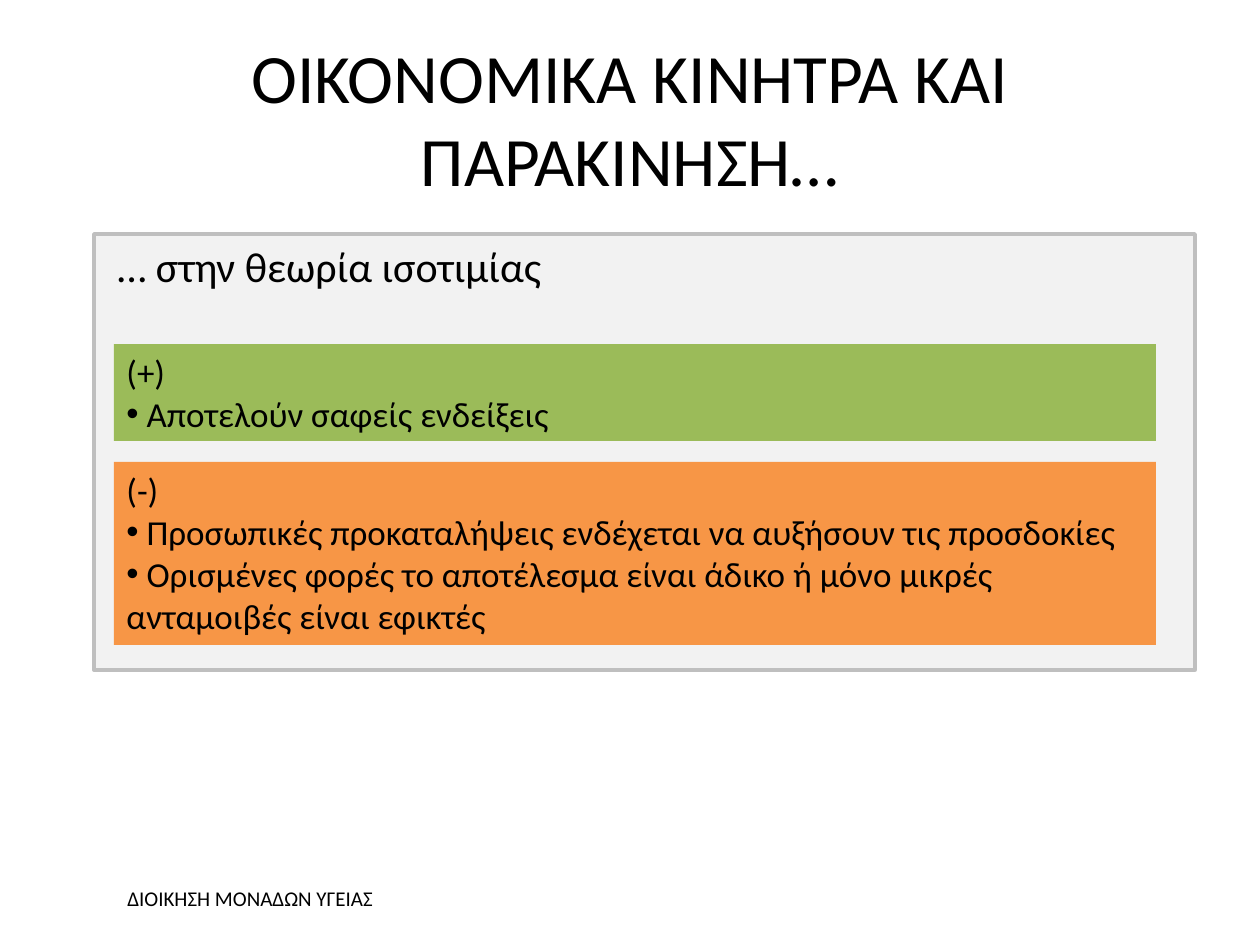
from lxml import etree
from pptx import Presentation
from pptx.dml.color import RGBColor
from pptx.enum.shapes import MSO_SHAPE as Shape
from pptx.enum.text import MSO_ANCHOR as Anchor, PP_ALIGN as Align
from pptx.oxml.ns import qn
from pptx.util import Emu, Pt

EMU_PER_PX = 914400 / 126


def px(length):
    return Emu(round(length * EMU_PER_PX))


def color(hex_value):
    return RGBColor.from_string(hex_value)


class SlideBuilder:
    font_name = "Calibri"
    text_color = "000000"

    def __init__(self, slide):
        self.slide = slide

    def box(self, left, top, width, height, fill, line=None):
        shape = self.slide.shapes.add_shape(
            Shape.RECTANGLE, px(left), px(top), px(width), px(height))
        shape.shadow.inherit = False
        shape.fill.solid()
        shape.fill.fore_color.rgb = color(fill)
        if line:
            shape.line.color.rgb = color(line)
            shape.line.width = Pt(2)
        else:
            shape.line.fill.background()
        return shape

    def text(self, left, top, width, height, content, size,
             align=Align.LEFT, anchor=Anchor.TOP):
        shape = self.slide.shapes.add_textbox(
            px(left), px(top), px(width), px(height))
        self.fill_text(shape.text_frame, [content], size, align, anchor)

    def list_box(self, left, top, width, height, fill, heading, items):
        shape = self.box(left, top, width, height, fill)
        lines = [heading] + [f" {item}" for item in items]
        self.fill_text(shape.text_frame, lines, 20)
        for paragraph in shape.text_frame.paragraphs[1:]:
            self.bullet(paragraph)

    def bullet(self, paragraph):
        properties = paragraph._p.get_or_add_pPr()
        bullet_font = etree.Element(qn("a:buFont"), typeface="Arial")
        bullet_char = etree.Element(qn("a:buChar"), char="•")
        # Bullets come before the default run properties
        properties.insert(0, bullet_font)
        properties.insert(1, bullet_char)

    def fill_text(self, frame, lines, size, align=Align.LEFT, anchor=Anchor.TOP):
        frame.word_wrap = True
        frame.vertical_anchor = anchor
        frame.text = "\n".join(lines)
        for paragraph in frame.paragraphs:
            paragraph.alignment = align
            paragraph.font.name = self.font_name
            paragraph.font.size = Pt(size)
            paragraph.font.color.rgb = color(self.text_color)


def main():
    presentation = Presentation()
    presentation.slide_width, presentation.slide_height = px(1260), px(945)
    slide = presentation.slides.add_slide(presentation.slide_layouts[6])
    builder = SlideBuilder(slide)

    # Panel behind the content
    builder.box(94, 234, 1101, 436, "F2F2F2", line="BFBFBF")

    # Footer, title and panel heading
    builder.text(115, 879, 983, 38, "ΔΙΟΙΚΗΣΗ ΜΟΝΑΔΩΝ ΥΓΕΙΑΣ", 12)
    builder.text(63, 38, 1134, 158, "ΟΙΚΟΝΟΜΙΚΑ ΚΙΝΗΤΡΑ ΚΑΙ ΠΑΡΑΚΙΝΗΣΗ…", 39.6,
                 Align.CENTER, Anchor.MIDDLE)
    builder.text(105, 234, 515, 63, "… στην θεωρία ισοτιμίας", 24)

    # Advantages and disadvantages
    builder.list_box(114, 344, 1042, 97, "9BBB59", "(+)",
                     ["Αποτελούν σαφείς ενδείξεις"])
    builder.list_box(114, 462, 1042, 183, "F79646", "(-)", [
        "Προσωπικές προκαταλήψεις ενδέχεται να αυξήσουν τις προσδοκίες",
        "Ορισμένες φορές το αποτέλεσμα είναι άδικο ή μόνο μικρές "
        "ανταμοιβές είναι εφικτές",
    ])

    presentation.save("out.pptx")


if __name__ == "__main__":
    main()
